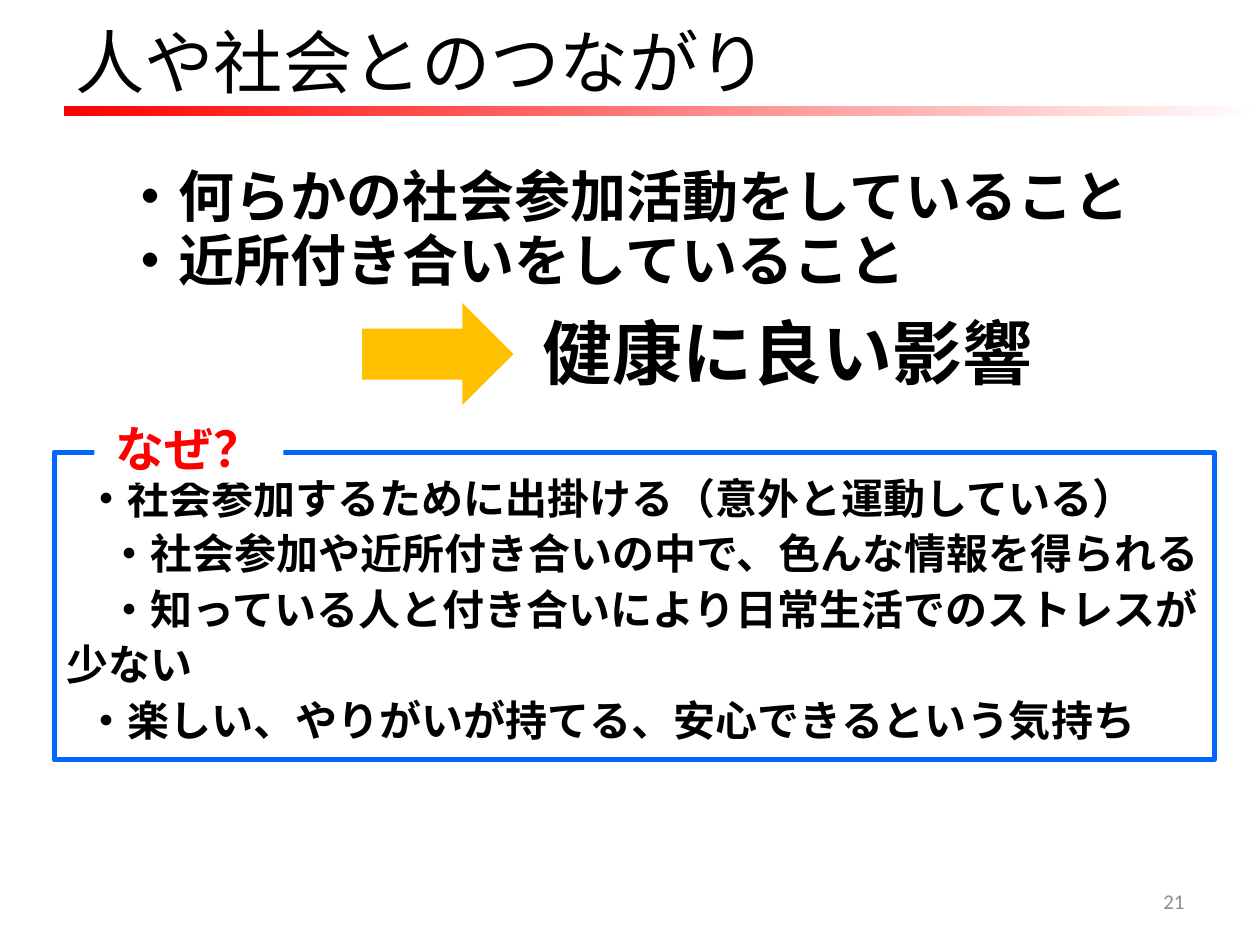
import pptx
import pptx.util
import pptx.dml.color
import pptx.enum.shapes
import pptx.enum.text
import pptx.oxml
import pptx.oxml.ns

COLOURS = {
    "black": "000000", "white": "FFFFFF", "grey": "8C8C8C",
    "red": "FF0000", "amber": "FFC000", "blue": "0066FF",
}
JAPANESE = "Noto Sans CJK JP"
COLUMNS, ROWS = 100, 75
Pt = pptx.util.Pt
ALIGN = pptx.enum.text.PP_ALIGN
ANCHOR = pptx.enum.text.MSO_ANCHOR
SHAPE = pptx.enum.shapes.MSO_SHAPE


def colour(name):
    return pptx.dml.color.RGBColor.from_string(COLOURS[name])


class Deck:
    def __init__(self):
        self.show = pptx.Presentation()
        self.show.slide_width = pptx.util.Inches(10)
        self.show.slide_height = pptx.util.Inches(7.5)
        self.slide = self.show.slides.add_slide(self.show.slide_layouts[6])

    def frame(self, left, top, width, height):
        """Turn grid columns and rows into lengths."""
        column = self.show.slide_width / COLUMNS
        row = self.show.slide_height / ROWS
        return [round(n * unit) for n, unit in
                zip((left, top, width, height), (column, row, column, row))]

    def set_text(self, holder, lines, size, font=JAPANESE, ink="black",
                 bold=False, align=ALIGN.LEFT, anchor=ANCHOR.MIDDLE,
                 spacing=None, indents=()):
        """Fill a shape with paragraphs; indents are first-line, in points."""
        body = holder.text_frame
        body.text = "\n".join(lines)
        body.word_wrap = True
        body.vertical_anchor = anchor
        for paragraph in body.paragraphs:
            paragraph.alignment = align
            paragraph.line_spacing = spacing
            for run in paragraph.runs:
                run.font.size = Pt(size)
                run.font.name = font
                run.font.bold = bold
                run.font.color.rgb = colour(ink)
                east_asian = pptx.oxml.parse_xml(
                    f'<a:ea {pptx.oxml.ns.nsdecls("a")} typeface="{JAPANESE}"/>')
                run.font._rPr.find(pptx.oxml.ns.qn("a:latin")).addnext(east_asian)
        for paragraph, indent in zip(body.paragraphs, indents):
            properties = paragraph._p.get_or_add_pPr()
            properties.set("marL", "0")
            properties.set("indent", str(Pt(indent)))
        return body

    def text(self, place, lines, size, **style):
        box = self.slide.shapes.add_textbox(*self.frame(*place))
        return self.set_text(box, lines, size, **style)

    def shape(self, kind, place, fill, line=None):
        drawn = self.slide.shapes.add_shape(kind, *self.frame(*place))
        drawn.shadow.inherit = False
        drawn.fill.solid()
        drawn.fill.fore_color.rgb = colour(fill)
        if line:
            drawn.line.color.rgb = colour(line)
            drawn.line.width = Pt(3)
        else:
            drawn.line.fill.background()
        return drawn

    def fading_bar(self, place, start, end):
        bar = self.shape(SHAPE.RECTANGLE, place, start)
        bar.fill.gradient()
        bar.fill.gradient_angle = 0
        for stop, name in zip(bar.fill.gradient_stops, (start, end)):
            stop.color.rgb = colour(name)


def main():
    deck = Deck()
    deck.text((71.7, 69.5, 23.3, 4), ["21"], 12, font="Calibri",
              ink="grey", align=ALIGN.RIGHT)

    activities = deck.text(
        (4.3, 12.3, 95.7, 11.6),
        ["・何らかの社会参加活動をしていること", "・近所付き合いをしていること"],
        32, bold=True, anchor=ANCHOR.TOP, indents=(32, 32))
    neighbours = activities.paragraphs[1]
    neighbours.space_before = Pt(13)
    neighbours.line_spacing = Pt(24)

    deck.text((5, 1.3, 95, 7.1), ["人や社会とのつながり"], 39.6)
    deck.fading_bar((5.1, 8.4, 94.9, 0.8), "red", "white")

    arrow = deck.shape(SHAPE.DOWN_ARROW, (30.7, 22.1, 8.1, 12), "amber")
    arrow.rotation = 270

    reasons = deck.shape(SHAPE.RECTANGLE, (4.3, 35.9, 92.1, 24.4),
                         "white", line="blue")
    deck.set_text(reasons, [
        "・社会参加するために出掛ける（意外と運動している）",
        "・社会参加や近所付き合いの中で、色んな情報を得られる",
        "・知っている人と付き合いにより日常生活でのストレスが少ない",
        "・楽しい、やりがいが持てる、安心できるという気持ち",
    ], 24, bold=True, spacing=1.1, indents=(11, 24, 24, 11))

    why = deck.shape(SHAPE.RECTANGLE, (7.5, 32.8, 15, 5.5), "white")
    deck.set_text(why, ["なぜ？"], 28, font="Calibri", ink="red", bold=True,
                  align=ALIGN.CENTER)

    deck.text((42.1, 24.1, 46.1, 7.8), ["健康に良い影響"], 40, font="Arial",
              bold=True, anchor=ANCHOR.TOP)
    deck.show.save("out.pptx")


if __name__ == "__main__":
    main()
